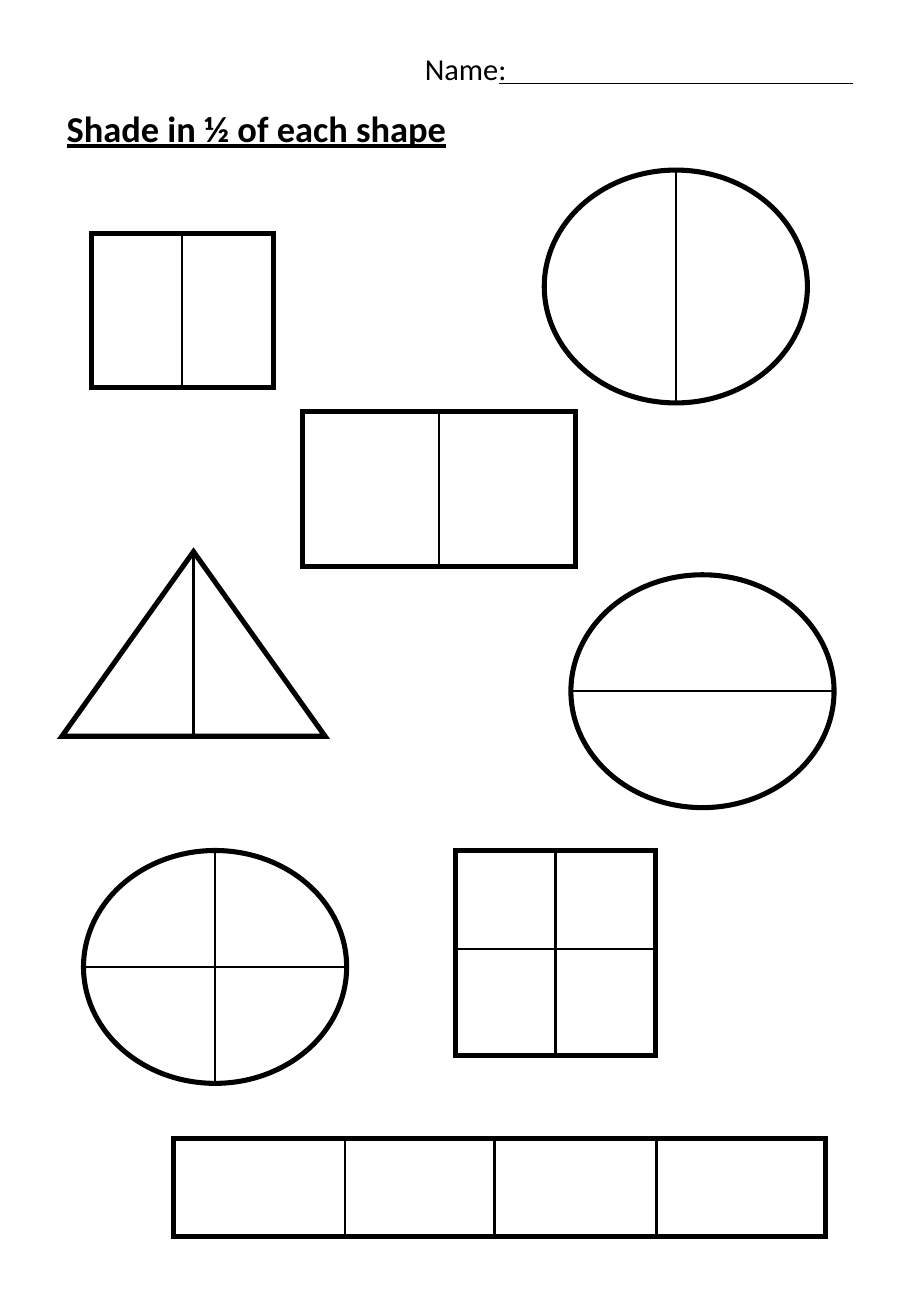
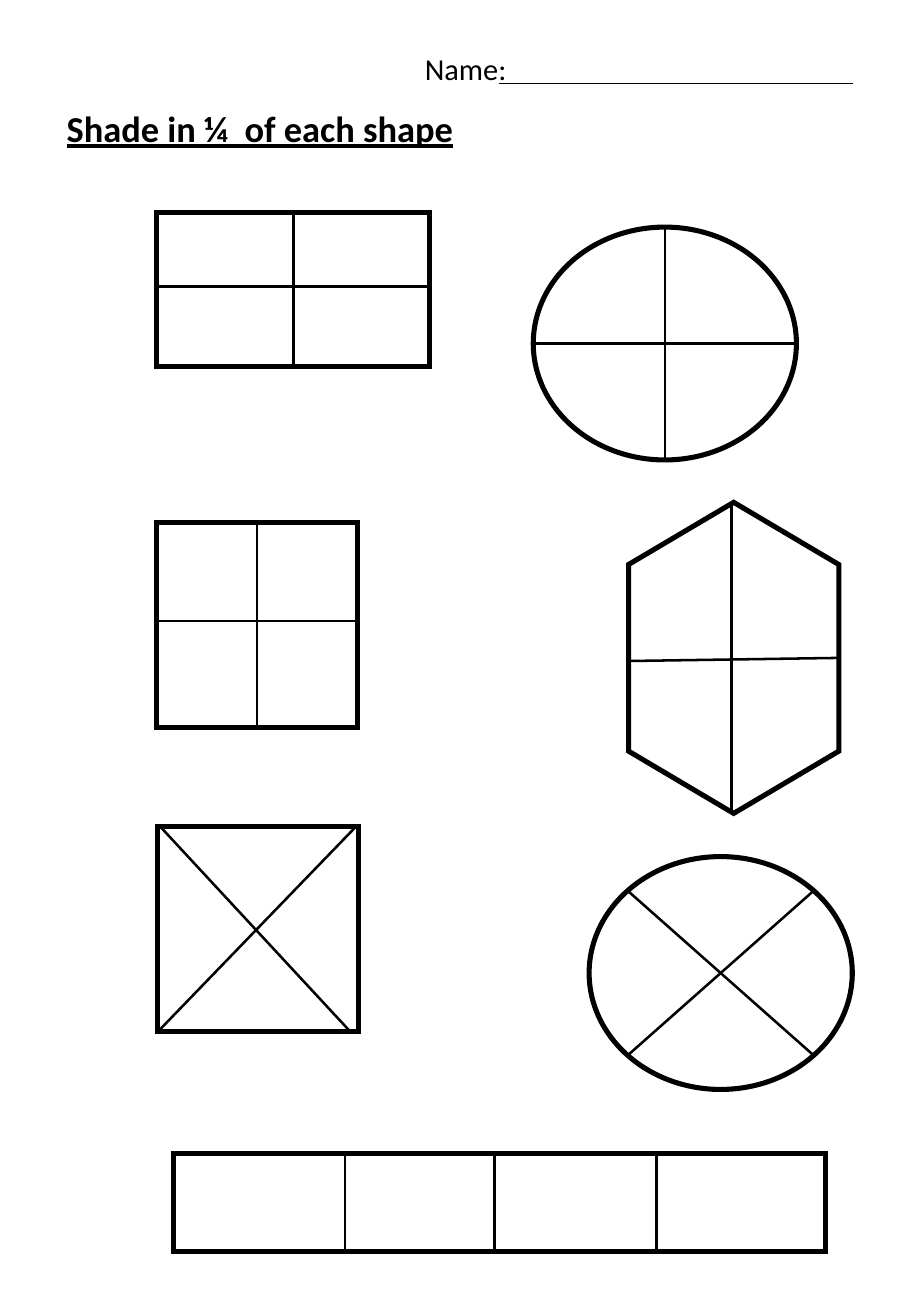
from dataclasses import dataclass
from typing import Any

import lxml.etree
import pptx
import pptx.dml.color
import pptx.enum.shapes
import pptx.enum.text
import pptx.oxml.ns
import pptx.util

BLACK = "000000"
WHITE = "FFFFFF"
FONT = "Calibri"
OUTLINE_WIDTH = 3
CUT_WIDTH = 1.5

PRESET = pptx.enum.shapes.MSO_SHAPE
RECTANGLE_SITES = {(0.5, 0): 0, (0, 0.5): 1, (0.5, 1): 2, (1, 0.5): 3}


@dataclass(frozen=True)
class Form:
    preset: Any
    width: float
    height: float
    quarter_turn: bool = False


@dataclass(frozen=True)
class Cut:
    start: tuple[float, float]
    end: tuple[float, float]


@dataclass(frozen=True)
class Figure:
    form: Form
    left: float
    top: float
    cuts: tuple[Cut, ...]
    grouped: bool = False


@dataclass(frozen=True)
class Worksheet:
    title: str
    figures: tuple[Figure, ...]


def down(fraction: float = 0.5) -> Cut:
    return Cut((fraction, 0), (fraction, 1))


def across(fraction: float = 0.5) -> Cut:
    return Cut((0, fraction), (1, fraction))


SMALL_BOX = Form(PRESET.RECTANGLE, 108, 91.5)
WIDE_BOX = Form(PRESET.RECTANGLE, 162, 91.5)
SQUARE = Form(PRESET.RECTANGLE, 118.8, 121.7)
STRIP = Form(PRESET.RECTANGLE, 386.6, 58.3)
OVAL = Form(PRESET.OVAL, 156, 138)
TRIANGLE = Form(PRESET.ISOSCELES_TRIANGLE, 156, 109.4)
HEXAGON = Form(PRESET.FLOWCHART_PREPARATION, 124.6, 184.3, quarter_turn=True)

CROSS = (down(), across())
HIGH_CROSS = (down(), across(0.48))
STRIP_CUTS = tuple(down(offset / STRIP.width) for offset in (101.5, 190, 286))
HEXAGON_CUTS = (Cut((1, 0.5), (0, 0.51)), down(0.49))
SQUARE_DIAGONALS = (Cut((0.01, 0), (0.96, 1)), Cut((0.99, 0), (0, 1)))
OVAL_DIAGONALS = (Cut((0.85, 0.15), (0.15, 0.85)), Cut((0.15, 0.15), (0.85, 0.85)))

WORKSHEETS = (
    Worksheet("Shade in ½ of each shape", (
        Figure(SMALL_BOX, 54, 138.2, (down(),)),
        Figure(SQUARE, 270, 504, HIGH_CROSS, grouped=True),
        Figure(OVAL, 49.5, 504, CROSS),
        Figure(OVAL, 322.6, 100.8, (down(),), grouped=True),
        Figure(OVAL, 338.4, 340.6, (across(),)),
        Figure(TRIANGLE, 36.7, 326.9, (down(),)),
        Figure(WIDE_BOX, 179.3, 244.1, (down(),)),
        Figure(STRIP, 103, 674.6, STRIP_CUTS),
    )),
    Worksheet("Shade in ¼  of each shape", (
        Figure(SQUARE, 92.9, 309.6, HIGH_CROSS, grouped=True),
        Figure(OVAL, 316.1, 134.6, CROSS),
        Figure(WIDE_BOX, 92.9, 126, HIGH_CROSS),
        Figure(STRIP, 103, 683.3, STRIP_CUTS),
        Figure(SQUARE, 93.6, 489.6, SQUARE_DIAGONALS, grouped=True),
        Figure(HEXAGON, 372.6, 297.7, HEXAGON_CUTS),
        Figure(OVAL, 349.2, 507.6, OVAL_DIAGONALS),
    )),
)


def color(value: str) -> pptx.dml.color.RGBColor:
    return pptx.dml.color.RGBColor.from_string(value)


def add_text(slide: Any, text: str, box: tuple[float, ...], size: float) -> Any:
    shape = slide.shapes.add_textbox(*map(pptx.util.Pt, box))
    shape.text_frame.word_wrap = True
    paragraph = shape.text_frame.paragraphs[0]
    paragraph.text = text
    paragraph.font.name = FONT
    paragraph.font.size = pptx.util.Pt(size)
    paragraph.font.color.rgb = color(BLACK)
    return shape


def add_line(shapes: Any, start: tuple[float, float], end: tuple[float, float], width: float) -> Any:
    connector = shapes.add_connector(
        pptx.enum.shapes.MSO_CONNECTOR.STRAIGHT, *map(pptx.util.Pt, start + end)
    )
    connector.line.color.rgb = color(BLACK)
    connector.line.width = pptx.util.Pt(width)
    lxml.etree.SubElement(connector._element.spPr, pptx.oxml.ns.qn("a:effectLst"))
    return connector


def add_outline(shapes: Any, figure: Figure) -> Any:
    form = figure.form
    width, height = form.width, form.height
    if form.quarter_turn:
        width, height = height, width
    left = figure.left + (form.width - width) / 2
    top = figure.top + (form.height - height) / 2
    shape = shapes.add_shape(form.preset, *map(pptx.util.Pt, (left, top, width, height)))
    shape.rotation = 90 if form.quarter_turn else 0
    shape.shadow.inherit = False
    shape.fill.solid()
    shape.fill.fore_color.rgb = color(WHITE)
    shape.line.color.rgb = color(BLACK)
    shape.line.width = pptx.util.Pt(OUTLINE_WIDTH)
    outline = shape._element.spPr.find(pptx.oxml.ns.qn("a:ln"))
    lxml.etree.SubElement(outline, pptx.oxml.ns.qn("a:miter"), lim="800000")
    shape.text_frame.paragraphs[0].font.color.rgb = color(BLACK)
    return shape


def add_figure(slide: Any, figure: Figure) -> None:
    shapes = slide.shapes.add_group_shape().shapes if figure.grouped else slide.shapes
    form = figure.form
    shape = add_outline(shapes, figure)
    for cut in figure.cuts:
        start, end = (
            (figure.left + x * form.width, figure.top + y * form.height)
            for x, y in (cut.start, cut.end)
        )
        connector = add_line(shapes, start, end, CUT_WIDTH)
        if form.preset == PRESET.RECTANGLE:
            if cut.start in RECTANGLE_SITES:
                connector.begin_connect(shape, RECTANGLE_SITES[cut.start])
            if cut.end in RECTANGLE_SITES:
                connector.end_connect(shape, RECTANGLE_SITES[cut.end])


def add_header(slide: Any, title: str) -> None:
    heading = add_text(slide, title, (32.4, 64.8, 397.4, 25.2), 21.6)
    heading.text_frame.vertical_anchor = pptx.enum.text.MSO_ANCHOR.MIDDLE
    paragraph = heading.text_frame.paragraphs[0]
    paragraph.line_spacing = 0.9
    paragraph.font.bold = True
    paragraph.font.underline = True
    name = add_text(slide, "Name:", (244.8, 25.9, 103.7, 28.8), 18)
    name.text_frame.auto_size = pptx.enum.text.MSO_AUTO_SIZE.SHAPE_TO_FIT_TEXT
    add_line(slide.shapes, (295.9, 49.7), (505.4, 49.7), 0.5)


def main() -> None:
    presentation = pptx.Presentation()
    presentation.slide_width = pptx.util.Pt(540)
    presentation.slide_height = pptx.util.Pt(779.8)
    for worksheet in WORKSHEETS:
        slide = presentation.slides.add_slide(presentation.slide_layouts[6])
        add_header(slide, worksheet.title)
        for figure in worksheet.figures:
            add_figure(slide, figure)
    presentation.save("out.pptx")


if __name__ == "__main__":
    main()
